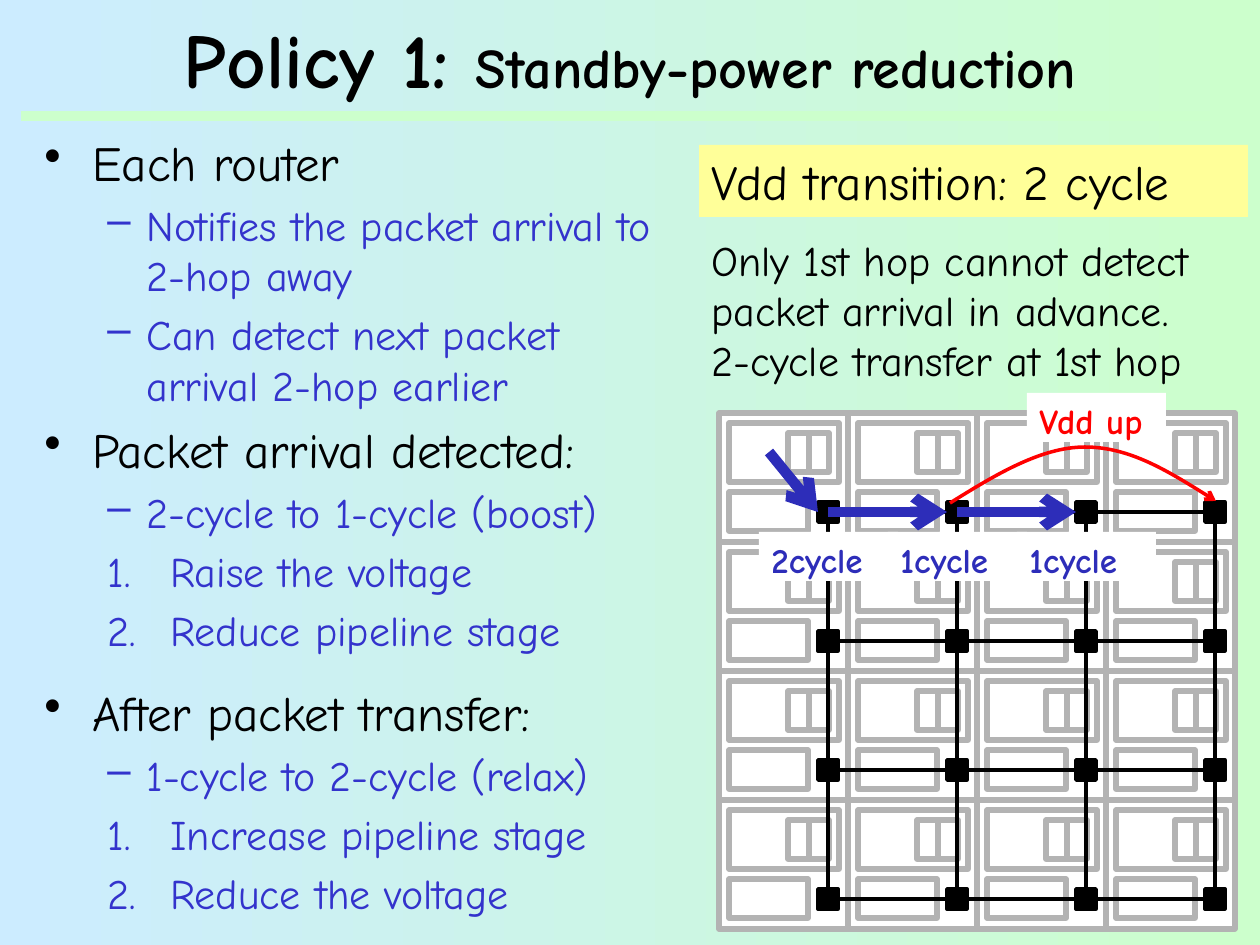
from itertools import product

from lxml.etree import SubElement as Sub
from pptx import Presentation
from pptx.dml.color import RGBColor as Rgb
from pptx.enum.shapes import MSO_CONNECTOR as Link, MSO_SHAPE as Form
from pptx.enum.text import MSO_ANCHOR as Anchor, PP_ALIGN as Align
from pptx.oxml.ns import qn
from pptx.util import Pt

SCALE = 914400 / 126
FONT = "Comic Neue"
BLACK, WHITE, GRAY = "000000", "FFFFFF", "B3B3B3"
BLUE, NAVY, RED = "3333CC", "2D2DB9", "FF0000"
SKY, MINT, CREAM = "CCECFF", "CCFFCC", "FFFF99"

LEVELS = {
    "•": (48, -48, 28, BLACK),
    "–": (102, -39, 24, BLUE),
    "1.": (126, -63, 24, BLUE),
}
POINTS = [
    ("•", "Each router", 5.6),
    ("–", "Notifies the packet arrival to 2-hop away", 4.8),
    ("–", "Can detect next packet arrival 2-hop earlier", 4.8),
    ("•", "Packet arrival detected:", 5.6),
    ("–", "2-cycle to 1-cycle (boost)", 4.8),
    ("1.", "Raise the voltage", 4.8),
    ("1.", "Reduce pipeline stage", 4.8),
    ("•", "After packet transfer:", 16),
    ("–", "1-cycle to 2-cycle (relax)", 4.8),
    ("1.", "Increase pipeline stage", 4.8),
    ("1.", "Reduce the voltage", 4.8),
]
SIDE, LEFT, TOP, COUNT = 129, 719, 413, 4
PARTS = [(0, 0, SIDE, SIDE), (10, 10, 110, 59), (89, 20, 21, 39),
         (10, 79, 79, 39), (69, 20, 21, 39)]
NODE = 20
NODE_X, NODE_Y = LEFT + 99, TOP + 89
MID_X, MID_Y = NODE_X + NODE // 2, NODE_Y + NODE // 2


def px(*nums):
    return [round(num * SCALE) for num in nums]


def color(code):
    return Rgb.from_string(code)


def write(para, text, size=24, ink=BLACK, bold=False):
    run = para.add_run()
    run.text = text
    font = run.font
    font.name, font.size, font.bold = FONT, Pt(size), bold
    font.color.rgb = color(ink)


class Deck:
    """Draw styled elements on the current slide."""

    def __init__(self):
        self.file = Presentation()
        self.file.slide_width, self.file.slide_height = px(1260, 945)
        self.slide = self.file.slides.add_slide(self.file.slide_layouts[6])
        self.shapes = self.slide.shapes

    def back(self, *codes):
        fill = self.slide.background.fill
        fill.gradient()
        fill.gradient_angle = 0
        for stop, code in zip(fill.gradient_stops, codes):
            stop.color.rgb = color(code)

    def frame(self, box, fill=None, anchor=Anchor.TOP):
        shape = self.shapes.add_textbox(*px(*box))
        if fill:
            shape.fill.solid()
            shape.fill.fore_color.rgb = color(fill)
        frame = shape.text_frame
        frame.word_wrap, frame.vertical_anchor = True, anchor
        return frame

    def label(self, box, text, fill=WHITE, **style):
        write(self.frame(box, fill).paragraphs[0], text, **style)

    def rect(self, box, fill, line, width):
        shape = self.shapes.add_shape(Form.RECTANGLE, *px(*box))
        shape.shadow.inherit = False
        shape.fill.solid()
        shape.fill.fore_color.rgb = color(fill)
        self.stroke(shape, line, width)
        return shape

    def stroke(self, shape, ink, width, arrow=False):
        shape.line.color.rgb = color(ink)
        shape.line.width = Pt(width)
        if arrow:
            edge = shape._element.spPr.find(qn("a:ln"))
            Sub(edge, qn("a:tailEnd"), type="arrow")

    def line(self, start, end, ink, width, arrow=False, goal=None):
        link = self.shapes.add_connector(Link.STRAIGHT, *px(*start, *end))
        self.stroke(link, ink, width, arrow)
        Sub(link._element.spPr, qn("a:effectLst"))
        if goal:
            link.end_connect(*goal)

    def curve(self, start, knots, ink, width):
        pen = self.shapes.build_freeform(*start, scale=SCALE)
        pen.add_line_segments(knots, close=False)
        shape = pen.convert_to_shape()
        steps = shape._element.xpath(".//a:lnTo")
        for i in range(0, len(steps), 3):
            trio = steps[i:i + 3]
            bend = Sub(trio[0].getparent(), qn("a:cubicBezTo"))
            for step in trio:
                bend.append(step[0])
                step.getparent().remove(step)
        shape.fill.background()
        shape.shadow.inherit = False
        self.stroke(shape, ink, width, arrow=True)

    def bullets(self, box, items):
        frame = self.frame(box)
        for i, (mark, text, gap) in enumerate(items):
            para = frame.add_paragraph() if i else frame.paragraphs[0]
            left, hang, size, ink = LEVELS[mark]
            para.level = 0 if mark == "•" else 1
            para.space_before = Pt(gap)
            props = para._p.get_or_add_pPr()
            for key, num in zip(("marL", "indent"), px(left, hang)):
                props.set(key, str(num))
            if mark == "1.":
                Sub(props, qn("a:buAutoNum"), type="arabicPeriod")
            else:
                Sub(props, qn("a:buChar"), char=mark)
            write(para, text, size=size, ink=ink)


def mesh(deck):
    cells = list(product(range(COUNT), repeat=2))
    for col, row in cells:
        for x, y, wide, high in PARTS:
            box = (LEFT + col * SIDE + x, TOP + row * SIDE + y, wide, high)
            deck.rect(box, WHITE, GRAY, 3)
    nodes = {}
    for col, row in cells:
        box = (NODE_X + col * SIDE, NODE_Y + row * SIDE, NODE, NODE)
        nodes[col, row] = deck.rect(box, BLACK, BLACK, 2)
    last = COUNT - 1
    far = last * SIDE
    for i in range(COUNT):
        x, y = MID_X + i * SIDE, MID_Y + i * SIDE
        deck.line((x, MID_Y), (x, MID_Y + far), BLACK, 2.25, goal=(nodes[i, last], 2))
        deck.line((MID_X, y), (MID_X + far, y), BLACK, 2.25, goal=(nodes[last, i], 1))
    return nodes


def hops(deck, nodes):
    starts = [(769, 452), (MID_X, MID_Y), (MID_X + SIDE, MID_Y)]
    for i, start in enumerate(starts):
        text = "1cycle" if i else "2cycle"
        deck.label((759 + i * SIDE, 532, 139, 49), text, size=20, ink=NAVY, bold=True)
        end = (NODE_X + i * SIDE, MID_Y)
        deck.line(start, end, NAVY, 6, arrow=True, goal=(nodes[i, 0], 1))


def main():
    deck = Deck()
    deck.back(SKY, MINT)
    deck.line((21, 116), (1250, 116), MINT, 6)
    title = deck.frame((32, 10, 1197, 95), anchor=Anchor.MIDDLE).paragraphs[0]
    title.alignment = Align.CENTER
    write(title, "Policy 1: ", size=44, bold=True)
    write(title, "Standby-power reduction", size=32, bold=True)
    deck.label((699, 145, 549, 72), "Vdd transition: 2 cycle", fill=CREAM, size=28)
    nodes = mesh(deck)
    knots = [(995, 475), (1041, 447), (1085, 447), (1129, 447), (1173, 474), (1216, 501)]
    deck.curve((950, 503), knots, RED, 2)
    deck.label((1027, 393, 139, 49), "Vdd up", size=20, ink=RED, bold=True)
    hops(deck, nodes)
    note = deck.frame((699, 228, 561, 165))
    write(note.paragraphs[0], "Only 1st hop cannot detect packet arrival in advance.")
    write(note.add_paragraph(), "2-cycle transfer at 1st hop")
    deck.bullets((32, 126, 648, 777), POINTS)
    deck.file.save("out.pptx")


if __name__ == "__main__":
    main()
